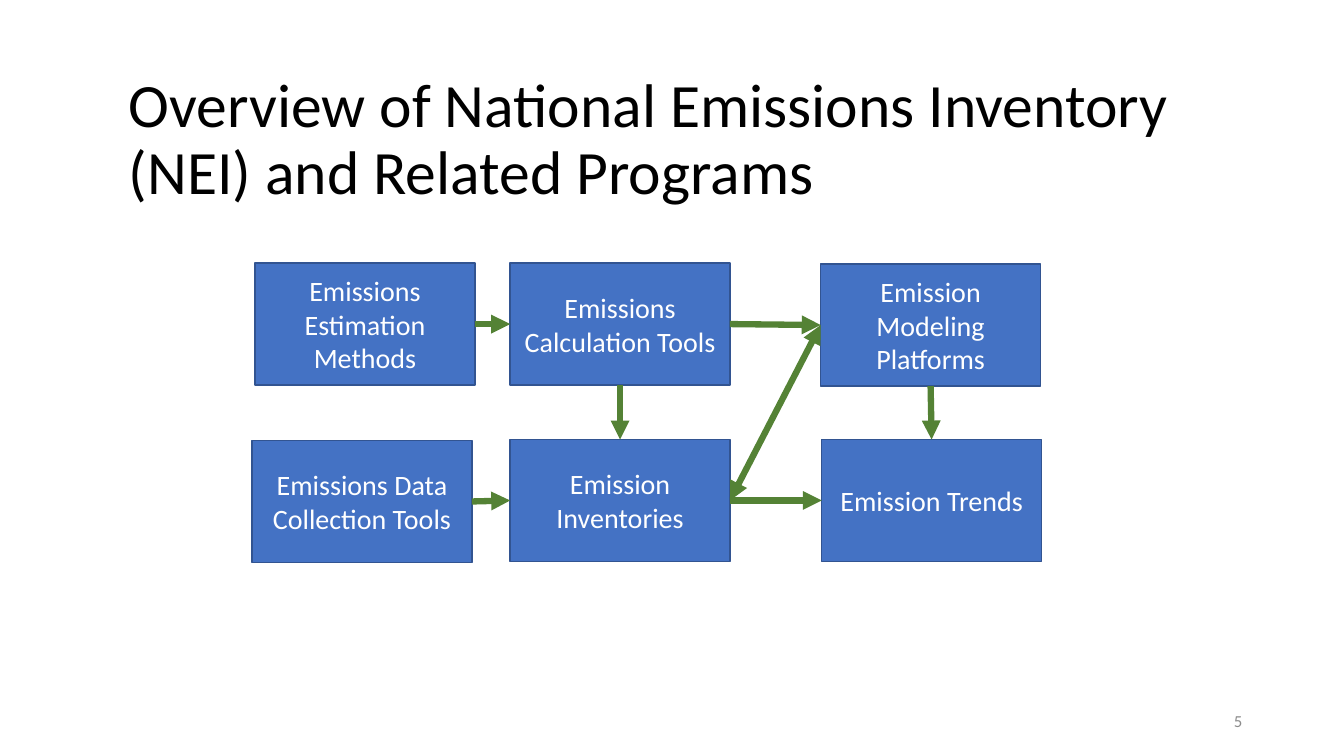
from lxml import etree
from pptx import Presentation
from pptx.dml.color import RGBColor
from pptx.enum.shapes import MSO_CONNECTOR, MSO_SHAPE
from pptx.enum.text import MSO_ANCHOR, PP_ALIGN
from pptx.oxml.ns import qn
from pptx.util import Inches, Pt

RECT = MSO_SHAPE.RECTANGLE
LINE = MSO_CONNECTOR.STRAIGHT
MIDDLE = MSO_ANCHOR.MIDDLE
LEFT, CENTER, RIGHT = PP_ALIGN.LEFT, PP_ALIGN.CENTER, PP_ALIGN.RIGHT
TOP, WEST, BOTTOM, EAST = range(4)

COLORS = {
    "title": "000000",
    "number": "8C8C8C",
    "box": "4472C4",
    "edge": "325491",
    "label": "FFFFFF",
    "arrow": "548235",
}
FONT = "Calibri"
BOX_W, BOX_H = 2.18, 1.21

BOXES = {
    "methods": (0.03, 0, ["Emissions", "Estimation Methods"]),
    "calc": (2.56, 0, ["Emissions Calculation Tools"]),
    "data": (0, 1.76, ["Emissions Data Collection Tools"]),
    "stock": (2.56, 1.75, ["Emission Inventories"]),
    "models": (5.64, 0.01, ["Emission Modeling Platforms"]),
    "trends": (5.65, 1.75, ["Emission Trends"]),
}
ARROWS = [
    ("methods", EAST, "calc", WEST, False),
    ("data", EAST, "stock", WEST, False),
    ("calc", BOTTOM, "stock", TOP, False),
    ("stock", EAST, "trends", WEST, False),
    ("stock", EAST, "models", WEST, True),
    ("calc", EAST, "models", WEST, False),
    ("models", BOTTOM, "trends", TOP, False),
]


def color(name):
    """Return the named colour."""
    return RGBColor.from_string(COLORS[name])


def write(shape, lines, size, tint, align):
    """Fill a shape with one paragraph, broken into the given lines."""
    frame = shape.text_frame
    frame.word_wrap = True
    frame.vertical_anchor = MIDDLE
    para = frame.paragraphs[0]
    para.alignment = align
    for i, line in enumerate(lines):
        if i:
            para.add_line_break()
        run = para.add_run()
        run.text = line
        run.font.name = FONT
        run.font.size = Pt(size)
        run.font.color.rgb = color(tint)
    return para


def add_text(slide, box, text, size, tint, align):
    """Place a text box and return its paragraph."""
    shape = slide.shapes.add_textbox(*map(Inches, box))
    return write(shape, [text], size, tint, align)


def add_title(slide, box):
    """Place the heading."""
    text = "Overview of National Emissions Inventory (NEI) and Related Programs"
    add_text(slide, box, text, 44, "title", LEFT).line_spacing = 0.9


def add_number(slide, box):
    """Place the slide number."""
    add_text(slide, box, "5", 12, "number", RIGHT)


def add_box(slide, left, top, lines):
    """Draw one step of the flow."""
    shape = slide.shapes.add_shape(RECT, *map(Inches, (left, top, BOX_W, BOX_H)))
    shape.shadow.inherit = False
    shape.fill.solid()
    shape.fill.fore_color.rgb = color("box")
    shape.line.color.rgb = color("edge")
    shape.line.width = Pt(1)
    write(shape, lines, 20, "label", CENTER)
    return shape


def add_arrow(slide, start, out, end, into, both):
    """Join two steps with an arrow, pointed at both ends if asked."""
    link = slide.shapes.add_connector(LINE, 0, 0, 0, 0)
    link.begin_connect(start, out)
    link.end_connect(end, into)
    link.line.color.rgb = color("arrow")
    link.line.width = Pt(4.5)
    props = link.line._get_or_add_ln()
    for tag in ["a:headEnd", "a:tailEnd"] if both else ["a:tailEnd"]:
        etree.SubElement(props, qn(tag), type="triangle")
    etree.SubElement(link._element.spPr, qn("a:effectLst"))


def add_flow(slide, left, top):
    """Draw the flow chart from its top left corner."""
    steps = {
        name: add_box(slide, left + x, top + y, lines)
        for name, (x, y, lines) in BOXES.items()
    }
    for start, out, end, into, both in ARROWS:
        add_arrow(slide, steps[start], out, steps[end], into, both)


def main():
    """Build and save the slide."""
    deck = Presentation()
    deck.slide_width, deck.slide_height = Inches(13.33), Inches(7.5)
    slide = deck.slides.add_slide(deck.slide_layouts[6])
    add_title(slide, (1.18, 0.54, 11, 1.72))
    add_number(slide, (9.42, 6.95, 3, 0.4))
    add_flow(slide, 2.5, 2.61)
    deck.save("out.pptx")


if __name__ == "__main__":
    main()
